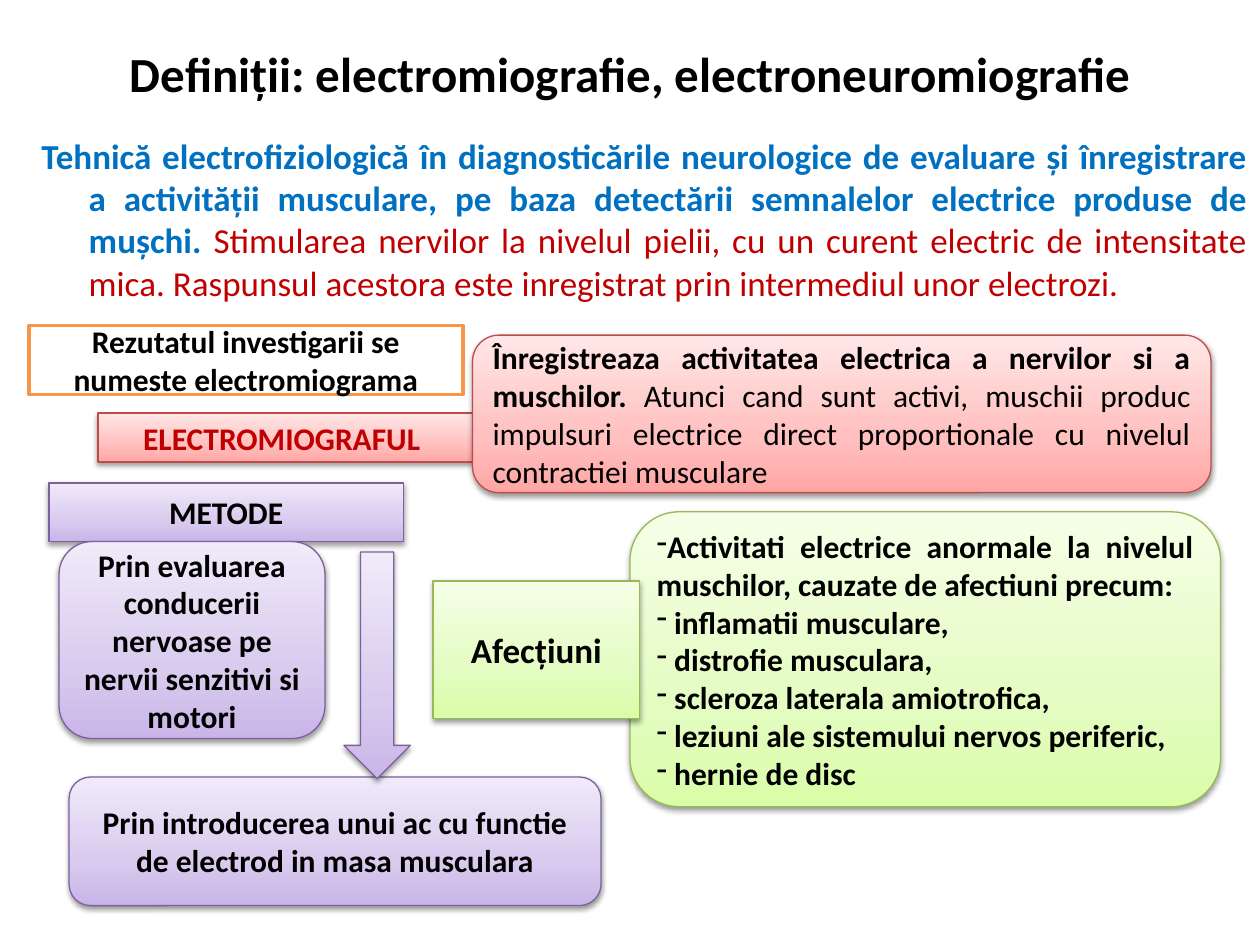
from lxml import etree
from pptx import Presentation
from pptx import util as u
from pptx.dml import color
from pptx.enum import shapes, text
from pptx.oxml import ns

BOX = shapes.MSO_SHAPE.RECTANGLE
ROUNDED = shapes.MSO_SHAPE.ROUNDED_RECTANGLE
ARROW = shapes.MSO_SHAPE.DOWN_ARROW
CENTER, JUSTIFY = text.PP_ALIGN.CENTER, text.PP_ALIGN.JUSTIFY

# Each theme: line colour, then gradient colours from bottom to top
RED = ("BF4C48", ("FFA6A5", "FFC0BF", "FFE7E7"))
GREEN = ("98B955", ("DAFDA7", "E4FCC2", "F5FFE7"))
PURPLE = ("7D60A0", ("C9B5E8", "D8CBEE", "F0EAF9"))
STOPS = (0, 35000, 100000)


def rgb(value):
    return color.RGBColor.from_string(value)


def add_element(parent, tag, **attributes):
    element = etree.SubElement(parent, ns.qn(tag))
    for name, value in attributes.items():
        element.set(name, str(value))
    return element


class SlideBuilder:
    font = "Calibri"
    black = "000000"

    def __init__(self, slide):
        self.slide = slide

    def place(self, shape, bounds):
        shape.left, shape.top, shape.width, shape.height = map(u.Pt, bounds)

    def format_run(self, run, size, hex_color, bold=True):
        run.font.name = self.font
        run.font.size = u.Pt(size)
        run.font.bold = bold
        run.font.color.rgb = rgb(hex_color)

    def add_runs(self, paragraph, parts, size):
        for content, hex_color, bold in parts:
            run = paragraph.add_run()
            run.text = content
            self.format_run(run, size, hex_color, bold)

    def title(self, content, bounds):
        shape = self.slide.shapes.title
        self.place(shape, bounds)
        frame = shape.text_frame
        frame.text = content
        frame.vertical_anchor = text.MSO_ANCHOR.MIDDLE
        frame.paragraphs[0].alignment = CENTER
        self.format_run(frame.paragraphs[0].runs[0], 28, self.black)

    def body(self, parts, bounds, hanging=27):
        shape = self.slide.placeholders[1]
        self.place(shape, bounds)
        shape.text_frame.auto_size = text.MSO_AUTO_SIZE.NONE
        paragraph = shape.text_frame.paragraphs[0]
        paragraph.alignment = JUSTIFY
        paragraph.space_before = u.Pt(0)
        properties = paragraph._p.get_or_add_pPr()
        properties.set("marL", str(u.Pt(hanging)))
        properties.set("indent", str(-u.Pt(hanging)))
        add_element(properties, "a:buNone")
        self.add_runs(paragraph, parts, 20)

    def shape(self, kind, bounds, line, width=0.75):
        shape = self.slide.shapes.add_shape(kind, *map(u.Pt, bounds))
        shape.shadow.inherit = False
        shape.line.color.rgb = rgb(line)
        shape.line.width = u.Pt(width)
        frame = shape.text_frame
        frame.word_wrap = True
        frame.vertical_anchor = text.MSO_ANCHOR.MIDDLE
        return shape

    def themed_shape(self, kind, bounds, theme):
        line, gradient = theme
        shape = self.shape(kind, bounds, line)
        shape.fill.gradient()
        shape.fill.gradient_angle = 90
        properties = shape._element.spPr
        # Three gradient stops
        stop_list = properties.find(".//" + ns.qn("a:gsLst"))
        for stop in list(stop_list):
            stop_list.remove(stop)
        for position, value in zip(STOPS, gradient):
            stop = add_element(stop_list, "a:gs", pos=position)
            add_element(stop, "a:srgbClr", val=value)
        # Soft shadow below
        shadow = add_element(properties.find(ns.qn("a:effectLst")), "a:outerShdw",
                             blurRad=u.Pt(3.1), dist=u.Pt(1.6), dir=5400000, rotWithShape=0)
        shade = add_element(shadow, "a:srgbClr", val=self.black)
        add_element(shade, "a:alpha", val=38000)
        return shape

    def label(self, shape, content, size=18, hex_color=black):
        paragraph = shape.text_frame.paragraphs[0]
        paragraph.text = content
        paragraph.alignment = CENTER
        self.format_run(paragraph.runs[0], size, hex_color)

    def justified(self, shape, parts):
        paragraph = shape.text_frame.paragraphs[0]
        paragraph.alignment = JUSTIFY
        self.add_runs(paragraph, parts, 18)

    def dashes(self, shape, items):
        frame = shape.text_frame
        frame.text = "\n".join(items)
        for paragraph in frame.paragraphs:
            paragraph.alignment = JUSTIFY
            add_element(paragraph._p.get_or_add_pPr(), "a:buChar", char="-")
            self.format_run(paragraph.runs[0], 18, self.black)


def main():
    presentation = Presentation()
    presentation.slide_width, presentation.slide_height = u.Pt(720), u.Pt(540)
    builder = SlideBuilder(presentation.slides.add_slide(presentation.slide_layouts[1]))

    # Title and definition
    builder.title("Definiții: electromiografie, electroneuromiografie", (36, 21.5, 648, 40.5))
    builder.body([
        ("Tehnică electrofiziologică în diagnosticările neurologice de evaluare și "
         "înregistrare a activității musculare, pe baza detectării semnalelor electrice "
         "produse de mușchi. ", "0070C0", True),
        ("Stimularea nervilor la nivelul pielii, cu un curent electric de intensitate mica. "
         "Raspunsul acestora este inregistrat prin intermediul unor electrozi.",
         "C00000", False),
    ], (16.5, 73.5, 703.5, 456))

    # Result of the investigation
    result = builder.shape(BOX, (16.5, 186, 248, 39.5), "F79646", 2)
    result.fill.solid()
    result.fill.fore_color.rgb = rgb("FFFFFF")
    builder.label(result, "Rezutatul investigarii se numeste electromiograma")

    # Device and what it records
    device = builder.themed_shape(BOX, (56, 236, 214, 28), RED)
    builder.label(device, "ELECTROMIOGRAFUL ", hex_color="C00000")
    recording = builder.themed_shape(ROUNDED, (270, 191.5, 422, 90), RED)
    builder.justified(recording, [
        ("Înregistreaza activitatea electrica a nervilor si a muschilor. ",
         builder.black, True),
        ("Atunci cand sunt activi, muschii produc impulsuri electrice direct "
         "proportionale cu nivelul contractiei musculare", builder.black, False),
    ])

    # Conditions
    conditions = builder.themed_shape(ROUNDED, (360, 292.5, 337.5, 168.5), GREEN)
    builder.dashes(conditions, [
        "Activitati electrice anormale la nivelul muschilor, cauzate de afectiuni precum: ",
        " inflamatii musculare, ",
        " distrofie musculara,",
        " scleroza laterala amiotrofica, ",
        " leziuni ale sistemului nervos periferic, ",
        " hernie de disc",
    ])
    heading = builder.themed_shape(BOX, (247.5, 332, 118, 78.5), GREEN)
    builder.label(heading, "Afecțiuni", size=20)

    # Methods
    for kind, bounds, content in (
        (BOX, (28, 276, 202.5, 33.5), "METODE"),
        (ROUNDED, (33.75, 309.5, 152, 112.5),
         "Prin evaluarea conducerii nervoase pe nervii senzitivi si motori"),
        (ROUNDED, (39.5, 444, 304, 73.5),
         "Prin introducerea unui ac cu functie de electrod in masa musculara"),
    ):
        builder.label(builder.themed_shape(kind, bounds, PURPLE), content)
    builder.themed_shape(ARROW, (196.5, 315.5, 38, 129.5), PURPLE)

    presentation.save("out.pptx")


if __name__ == "__main__":
    main()
